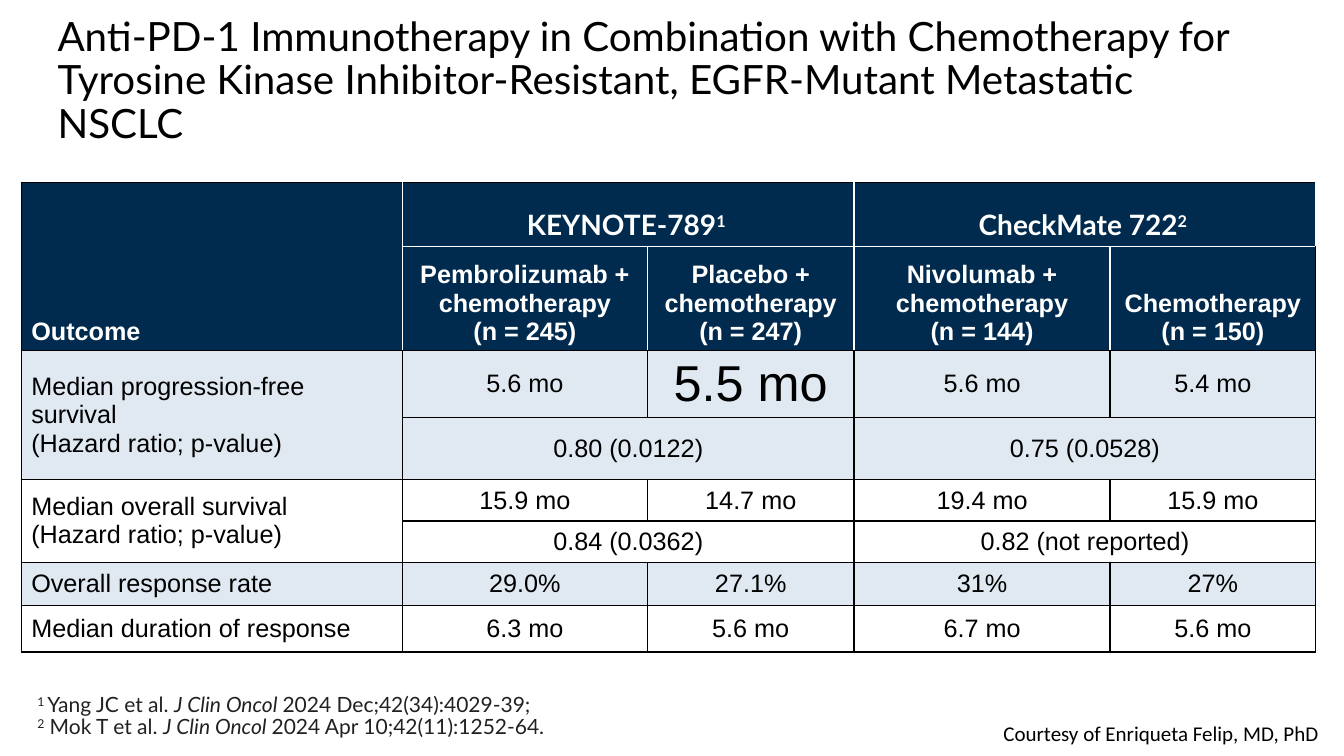
from lxml.etree import SubElement
from pptx import Presentation
from pptx.dml.color import RGBColor
from pptx.enum.text import MSO_ANCHOR, MSO_AUTO_SIZE, PP_ALIGN
from pptx.oxml.ns import qn
from pptx.util import Inches, Pt

WIDTH, HEIGHT = Inches(13.33), Inches(7.5)
COLORS = {
    "navy": "002B4E",
    "pale": "E0E9F2",
    "white": "FFFFFF",
    "black": "000000",
    "note": "212121",
}
SUPERSCRIPT = {"baseline": 30000}
ITALIC = {"italic": True}

TITLE = (
    "Anti-PD-1 Immunotherapy in Combination with Chemotherapy for "
    "Tyrosine Kinase Inhibitor-Resistant, EGFR-Mutant Metastatic NSCLC"
)
COLUMN_SHARES = [28.36, 18.23, 15.38, 19.05, 15.3]
ROW_SHARES = [8.53, 13.73, 5.47, 8.27, 5.47, 5.47, 5.73, 6.13]
HEADER_ROWS = 2
ROW_FILLS = ["navy"] * 2 + ["pale"] * 2 + ["white"] * 2 + ["pale", "white"]
ROWS = [
    [["Outcome"], [[("KEYNOTE-789", {}), ("1 ", SUPERSCRIPT)]], None,
     [[("CheckMate 722", {}), ("2 ", SUPERSCRIPT)]], None],
    [None, ["Pembrolizumab + chemotherapy", "(n = 245)"],
     ["Placebo + chemotherapy", "(n = 247)"],
     ["Nivolumab + chemotherapy", "(n = 144)"],
     ["Chemotherapy", "(n = 150)"]],
    [["Median progression-free survival", "(Hazard ratio; p-value)"],
     ["5.6 mo"], ["5.5 mo"], ["5.6 mo"], ["5.4 mo"]],
    [None, ["0.80 (0.0122)"], None, ["0.75 (0.0528)"], None],
    [["Median overall survival", "(Hazard ratio; p-value)"],
     ["15.9 mo"], ["14.7 mo"], ["19.4 mo"], ["15.9 mo"]],
    [None, ["0.84 (0.0362)"], None, ["0.82 (not reported)"], None],
    [["Overall response rate"], ["29.0%"], ["27.1%"], ["31%"], ["27%"]],
    [["Median duration of response"], ["6.3 mo"], ["5.6 mo"], ["6.7 mo"], ["5.6 mo"]],
]
ENLARGED_CELL = (2, 2)
REFERENCES = [
    [("1 ", SUPERSCRIPT), ("Yang JC et al. ", {}), ("J Clin Oncol ", ITALIC),
     ("2024 Dec;42(34):4029-39;", {})],
    [("2", SUPERSCRIPT), (" Mok T et al. ", {}), ("J Clin Oncol ", ITALIC),
     ("2024 Apr 10;42(11):1252-64.", {})],
]


def across(percent):
    return round(WIDTH * percent / 100)


def down(percent):
    return round(HEIGHT * percent / 100)


def area(left, top, width, height):
    return across(left), down(top), across(width), down(height)


def write(frame, paragraphs, font="Arial", size=18, color="black", bold=False,
          align=PP_ALIGN.LEFT, spacing=None):
    for index, content in enumerate(paragraphs):
        paragraph = frame.paragraphs[0] if index == 0 else frame.add_paragraph()
        paragraph.alignment = align
        if spacing:
            paragraph.line_spacing = spacing
        runs = [(content, {})] if isinstance(content, str) else content
        for text, style in runs:
            run = paragraph.add_run()
            run.text = text
            run.font.name = font
            run.font.size = Pt(size)
            run.font.bold = bold
            run.font.italic = style.get("italic", False)
            run.font.color.rgb = RGBColor.from_string(COLORS[color])
            if "baseline" in style:
                run._r.get_or_add_rPr().set("baseline", str(style["baseline"]))


def add_title(slide):
    title = slide.shapes.title
    title.left, title.top, title.width, title.height = area(3.53, 5.07, 90.17, 11.47)
    frame = title.text_frame
    frame.auto_size = MSO_AUTO_SIZE.NONE
    frame.vertical_anchor = MSO_ANCHOR.MIDDLE
    write(frame, [TITLE], font="Lato", size=28.8, spacing=0.9)


def add_text_box(slide, box, paragraphs, wrap=True, inset=None,
                 anchor=MSO_ANCHOR.TOP, **text_format):
    frame = slide.shapes.add_textbox(*box).text_frame
    frame.word_wrap = wrap
    frame.vertical_anchor = anchor
    if inset is not None:
        frame.margin_left = frame.margin_right = inset
        frame.margin_top = frame.margin_bottom = inset
    write(frame, paragraphs, **text_format)


def border_colors(row, column):
    header = row < HEADER_ROWS
    last = len(COLUMN_SHARES) - 1
    white_edges = {
        "lnL": header and column > 0,
        "lnR": header and (row == 0 or column < last),
        "lnT": row == 1 and column > 0,
        "lnB": row == 0 and column > 0,
    }
    return {edge: "white" if white else "black" for edge, white in white_edges.items()}


def format_cell(cell, row, column):
    properties = cell._tc.get_or_add_tcPr()
    for edge, color in border_colors(row, column).items():
        line = SubElement(properties, qn(f"a:{edge}"), w=str(Pt(1)))
        fill = SubElement(line, qn("a:solidFill"))
        SubElement(fill, qn("a:srgbClr"), val=COLORS[color])
    cell.fill.solid()
    cell.fill.fore_color.rgb = RGBColor.from_string(COLORS[ROW_FILLS[row]])
    header = row < HEADER_ROWS
    cell.vertical_anchor = MSO_ANCHOR.BOTTOM if header else MSO_ANCHOR.MIDDLE


def cell_text_format(row, column):
    header = row < HEADER_ROWS
    trial_name = row == 0 and column > 0
    size = 20 if trial_name else 36 if (row, column) == ENLARGED_CELL else 18
    return {
        "font": "Lato" if trial_name else "Arial",
        "size": size,
        "color": "white" if header else "black",
        "bold": header,
        "align": PP_ALIGN.CENTER if column else PP_ALIGN.LEFT,
    }


def add_outcome_table(slide):
    box = area(1.58, 24.13, sum(COLUMN_SHARES), sum(ROW_SHARES))
    table = slide.shapes.add_table(len(ROW_SHARES), len(COLUMN_SHARES), *box).table
    table.first_row = table.horz_banding = False
    for column, share in zip(table.columns, COLUMN_SHARES):
        column.width = across(share)
    for row, share in zip(table.rows, ROW_SHARES):
        row.height = down(share)
    for row, contents in enumerate(ROWS):
        for column, paragraphs in enumerate(contents):
            cell = table.cell(row, column)
            format_cell(cell, row, column)
            if paragraphs:
                write(cell.text_frame, paragraphs, **cell_text_format(row, column))
    for row in (0, 2, 4):
        table.cell(row, 0).merge(table.cell(row + 1, 0))
    for row in (0, 3, 5):
        for column in (1, 3):
            table.cell(row, column).merge(table.cell(row, column + 1))


def main():
    presentation = Presentation()
    presentation.slide_width, presentation.slide_height = WIDTH, HEIGHT
    slide = presentation.slides.add_slide(presentation.slide_layouts[5])
    add_title(slide)
    add_outcome_table(slide)
    add_text_box(slide, area(2.78, 92.27, 48.99, 5.2), REFERENCES, inset=0,
                 anchor=MSO_ANCHOR.MIDDLE, font="Lato", size=15, color="note",
                 spacing=0.88)
    add_text_box(slide, area(73.67, 94.67, 25.43, 4.67),
                 ["Courtesy of Enriqueta Felip, MD, PhD"], wrap=False,
                 font="Calibri", size=15, align=PP_ALIGN.CENTER)
    presentation.save("out.pptx")


if __name__ == "__main__":
    main()
